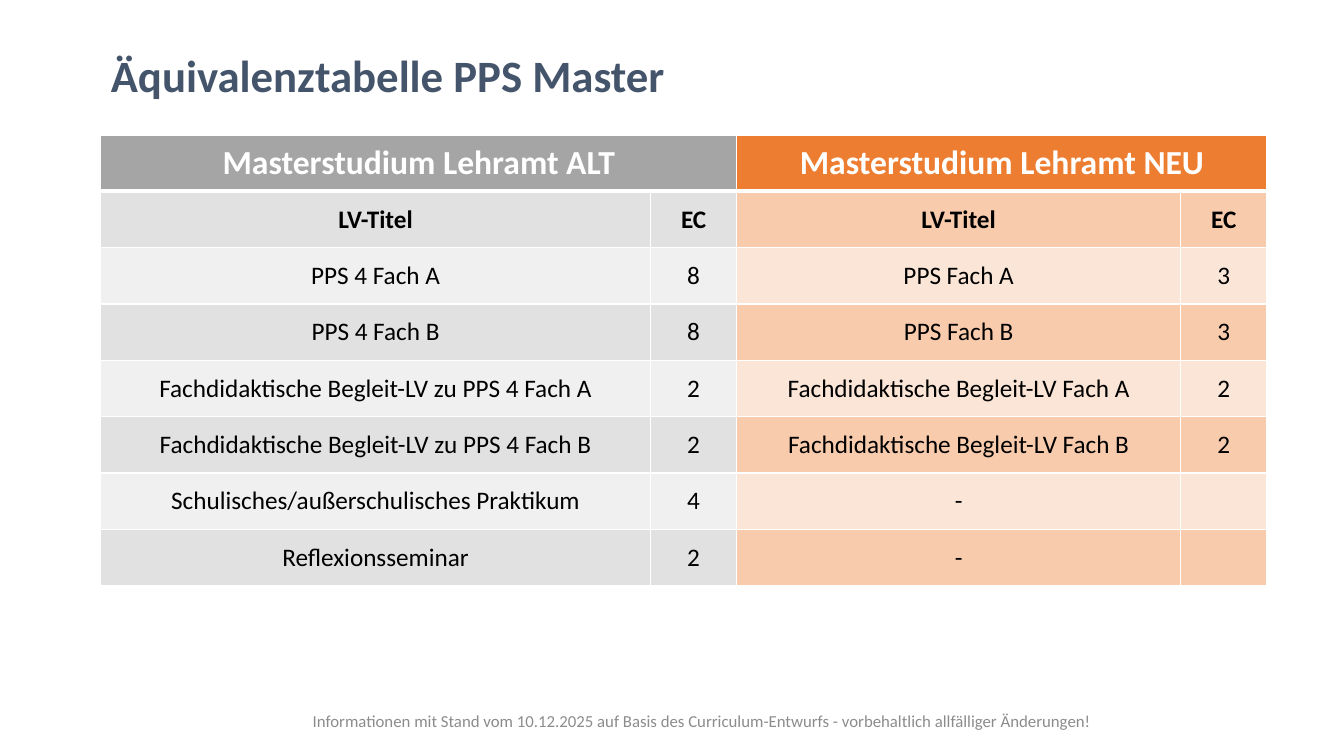
from lxml import etree
from pptx import Presentation
from pptx.dml.color import RGBColor
from pptx.enum.text import MSO_ANCHOR, MSO_AUTO_SIZE, PP_ALIGN
from pptx.oxml.ns import qn
from pptx.util import Cm, Pt

LEFT, CENTER = PP_ALIGN.LEFT, PP_ALIGN.CENTER
TOP, MIDDLE = MSO_ANCHOR.TOP, MSO_ANCHOR.MIDDLE
NO_AUTOFIT = MSO_AUTO_SIZE.NONE
TITLE_ONLY = 5
FONT = "Calibri"
ROW_HEIGHT = 1.42
CREDIT_WIDTH = 2.18

OLD_COURSES = [
    ("PPS 4 Fach A", "8"),
    ("PPS 4 Fach B", "8"),
    ("Fachdidaktische Begleit-LV zu PPS 4 Fach A", "2"),
    ("Fachdidaktische Begleit-LV zu PPS 4 Fach B", "2"),
    ("Schulisches/außerschulisches Praktikum", "4"),
    ("Reflexionsseminar", "2"),
]
NEW_COURSES = [
    ("PPS Fach A", "3"),
    ("PPS Fach B", "3"),
    ("Fachdidaktische Begleit-LV Fach A", "2"),
    ("Fachdidaktische Begleit-LV Fach B", "2"),
    ("-", ""),
    ("-", ""),
]


def color(value):
    """Turn a hex string into a colour."""
    return RGBColor.from_string(value)


def write(frame, text, size, ink, bold=False, align=CENTER):
    """Put one formatted run into the first paragraph of a frame."""
    para = frame.paragraphs[0]
    para.alignment = align
    span = para.add_run()
    span.text = text
    span.font.name = FONT
    span.font.size = Pt(size)
    span.font.bold = bold
    span.font.color.rgb = color(ink)


def add_borders(cell, bottom, top):
    """Draw white cell borders with the given bottom and top widths in points."""
    properties = cell._tc.get_or_add_tcPr()
    for side, width in (("L", 1), ("R", 1), ("T", top), ("B", bottom)):
        line = etree.SubElement(properties, qn(f"a:ln{side}"), w=str(Pt(width)))
        fill = etree.SubElement(line, qn("a:solidFill"))
        etree.SubElement(fill, qn("a:srgbClr"), val="FFFFFF")


def add_title(page, text, left, top, width, height):
    """Place and format the title placeholder."""
    box = page.shapes.title
    box.left, box.top, box.width, box.height = map(Cm, (left, top, width, height))
    frame = box.text_frame
    frame.word_wrap = True
    frame.auto_size = NO_AUTOFIT
    frame.vertical_anchor = TOP
    write(frame, text, 32, "44546A", bold=True, align=LEFT)


def add_footer(page, text, left, top, width, height):
    """Add the centred grey note at the foot of the page."""
    box = page.shapes.add_textbox(*map(Cm, (left, top, width, height)))
    frame = box.text_frame
    frame.word_wrap = True
    frame.vertical_anchor = MIDDLE
    write(frame, text, 12, "8C8C8C")


def add_course_table(page, heading, courses, left, top, width, shades):
    """Add a course table under a merged heading, with alternating row shades."""
    rows = [(heading, ""), ("LV-Titel", "EC"), *courses]
    box = page.shapes.add_table(
        len(rows), 2, Cm(left), Cm(top), Cm(width), Cm(ROW_HEIGHT * len(rows))
    )
    table = box.table
    table.columns[0].width = Cm(width - CREDIT_WIDTH)
    table.columns[1].width = Cm(CREDIT_WIDTH)
    table.cell(0, 0).merge(table.cell(0, 1))
    header_shade, *body_shades = shades
    for index, texts in enumerate(rows):
        table.rows[index].height = Cm(ROW_HEIGHT)
        is_header = index == 0
        shade = header_shade if is_header else body_shades[(index - 1) % 2]
        size, ink = (24, "FFFFFF") if is_header else (18, "000000")
        for cell, text in zip(table.rows[index].cells, texts):
            add_borders(cell, 3 if is_header else 1, 3 if index == 1 else 1)
            cell.fill.solid()
            cell.fill.fore_color.rgb = color(shade)
            cell.vertical_anchor = MIDDLE
            if text:
                write(cell.text_frame, text, size, ink, bold=index < 2)


def main():
    """Build the equivalence slide and save the deck."""
    deck = Presentation()
    deck.slide_width, deck.slide_height = Cm(33.87), Cm(19.05)
    page = deck.slides.add_slide(deck.slide_layouts[TITLE_ONLY])
    left, top, old_width, new_width = 2.54, 3.4, 16.03, 13.36
    add_title(page, "Äquivalenztabelle PPS Master", left, 1.07, 17.86, 1.63)
    add_footer(
        page,
        "Informationen mit Stand vom 10.12.2025 auf Basis des Curriculum-Entwurfs"
        " - vorbehaltlich allfälliger Änderungen!",
        6.43, 17.65, 22.53, 1.02,
    )
    add_course_table(
        page, "Masterstudium Lehramt ALT", OLD_COURSES,
        left, top, old_width, ("A5A5A5", "E1E1E1", "F0F0F0"),
    )
    add_course_table(
        page, "Masterstudium Lehramt NEU", NEW_COURSES,
        left + old_width, top, new_width, ("ED7D31", "F8CBAD", "FBE5D6"),
    )
    deck.save("out.pptx")


if __name__ == "__main__":
    main()
